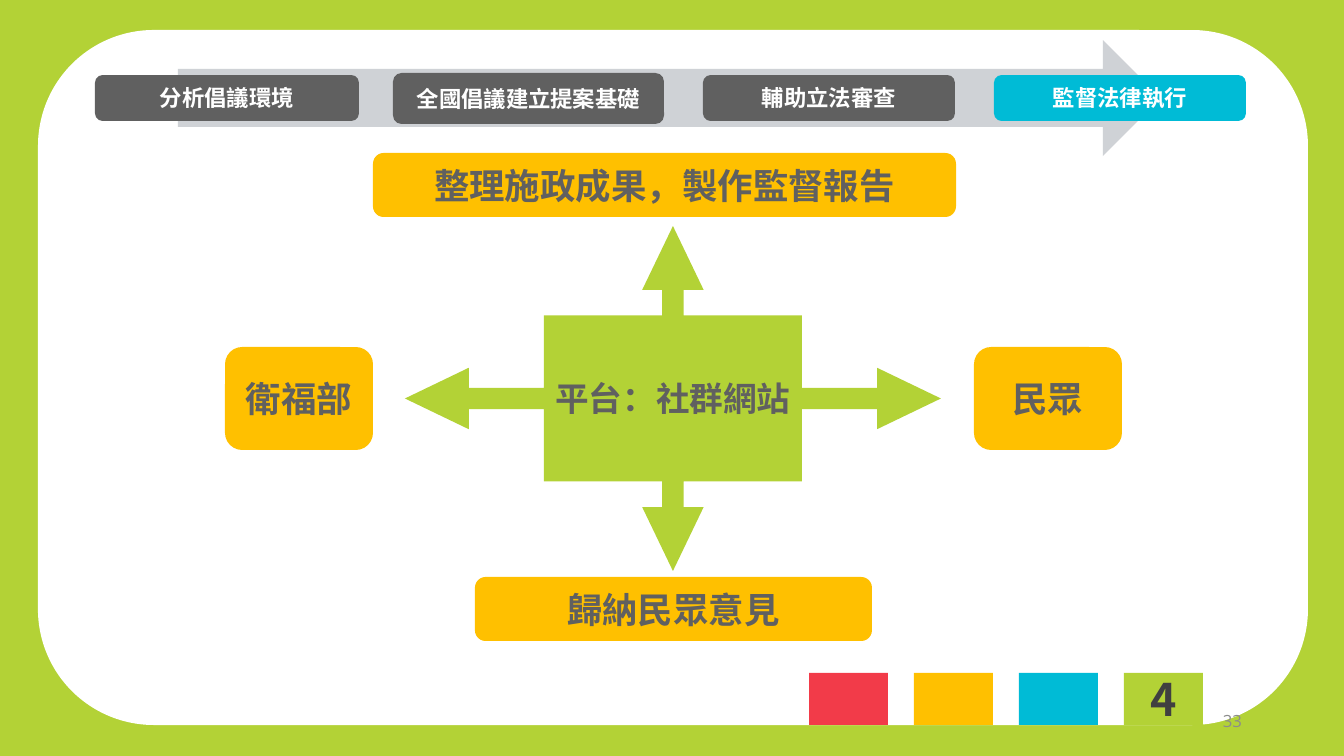
"""Build the slide on monitoring how the law is carried out."""
from lxml import etree
from pptx import Presentation
from pptx import util as u
from pptx.dml.color import RGBColor
from pptx.enum import shapes, text
from pptx.oxml import ns

SCALE = 914400 / 100.8
SANS = "Noto Sans CJK SC"
GREEN, GOLD, CYAN, RED = "B3D236", "FFC000", "00BBD6", "F23B49"
GRAY, WHITE = "606060", "FFFFFF"
KIND = shapes.MSO_SHAPE


def px(num):
    """Turn pixels into EMU."""
    return u.Emu(round(num * SCALE))


def paint(fill, hue):
    """Make a fill solid in a hex colour."""
    fill.solid()
    fill.fore_color.rgb = RGBColor.from_string(hue)


def write(shape, words, size, hue, font=SANS, bold=True, align=text.PP_ALIGN.CENTER):
    """Put one line of formatted text in a shape."""
    frame = shape.text_frame
    frame.text = words
    frame.word_wrap = True
    frame.vertical_anchor = text.MSO_ANCHOR.MIDDLE
    frame.margin_left = frame.margin_right = 0
    frame.margin_top = frame.margin_bottom = 0
    line = frame.paragraphs[0]
    line.alignment = align
    run = line.runs[0]
    run.font.name, run.font.size, run.font.bold = font, u.Pt(size), bold
    run.font.color.rgb = RGBColor.from_string(hue)
    etree.SubElement(run._r.get_or_add_rPr(), ns.qn("a:ea"), typeface=font)


def block(slide, kind, box, hue):
    """Add a flat preset shape."""
    shape = slide.shapes.add_shape(kind, *map(px, box))
    shape.shadow.inherit = False
    paint(shape.fill, hue)
    shape.line.fill.background()
    return shape


def label(slide, box, hue, words, size, ink):
    """Add a rounded box with a caption."""
    shape = block(slide, KIND.ROUNDED_RECTANGLE, box, hue)
    write(shape, words, size, ink)


def steps(slide):
    """Add the arrow with the four stages."""
    block(slide, KIND.RIGHT_ARROW, (178, 40, 983, 116), "CFD2D6")
    for box, hue, words in (
        ((95, 75, 264, 46), GRAY, "分析倡議環境"),
        ((393, 73, 271, 51), GRAY, "全國倡議建立提案基礎"),
        ((703, 75, 252, 46), GRAY, "輔助立法審查"),
        ((994, 75, 252, 46), CYAN, "監督法律執行"),
    ):
        label(slide, box, hue, words, 16, WHITE)


def hub(slide):
    """Add the platform with its four partners."""
    cross = block(slide, KIND.QUAD_ARROW_CALLOUT, (405, 226, 536, 345), GREEN)
    for i, val in enumerate((0.062, 0.089, 0.185, 0.481)):
        cross.adjustments[i] = val
    write(cross, "平台：社群網站", 24, GRAY)
    for box, words in (
        ((974, 347, 148, 103), "民眾"),
        ((225, 347, 148, 103), "衛福部"),
        ((475, 577, 397, 64), "歸納民眾意見"),
        ((373, 153, 583, 64), "整理施政成果，製作監督報告"),
    ):
        label(slide, box, GOLD, words, 25.3, GRAY)


def tiles(slide):
    """Add the row of squares, the last one numbered."""
    for i, hue in enumerate((RED, GOLD, CYAN, GREEN)):
        tile = block(slide, KIND.RECTANGLE, (809 + 105 * i, 673, 79, 52), hue)
    write(tile, "4", 32, "404040")


def main():
    """Build and save the slide."""
    deck = Presentation()
    deck.slide_width, deck.slide_height = px(1344), px(756)
    slide = deck.slides.add_slide(deck.slide_layouts[6])
    paint(slide.background.fill, GREEN)
    block(slide, KIND.ROUNDED_RECTANGLE, (38, 30, 1270, 695), WHITE)
    page = slide.shapes.add_textbox(*map(px, (950, 701, 292, 40)))
    write(page, "33", 12, "8C8C8C", "Open Sans", False, text.PP_ALIGN.RIGHT)
    tiles(slide)
    steps(slide)
    hub(slide)
    deck.save("out.pptx")


if __name__ == "__main__":
    main()
